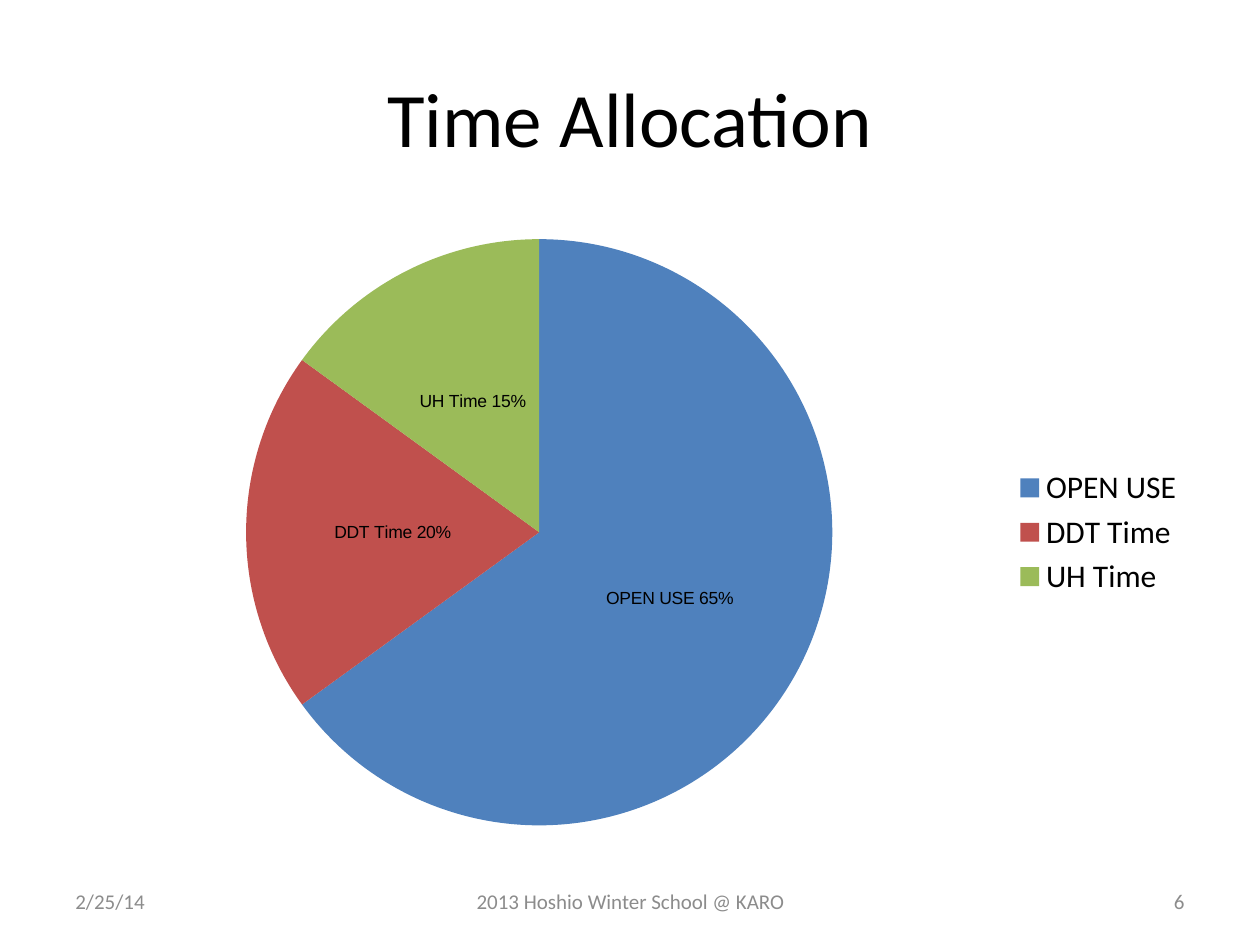
import pptx
import pptx.util
import pptx.chart.data
import pptx.dml.color
import pptx.enum.chart
import pptx.enum.text
import pptx.oxml
import pptx.oxml.ns

Inches, Pt = pptx.util.Inches, pptx.util.Pt
Align = pptx.enum.text.PP_ALIGN
Middle = pptx.enum.text.MSO_ANCHOR.MIDDLE

TITLE = "Time Allocation"
SHARES = [("OPEN USE", 65, "4F81BD"), ("DDT Time", 20, "C0504D"), ("UH Time", 15, "9BBB59")]
FOOTER = [  # text, left, width, alignment
    ("2/25/14", 0.5, 2.33, Align.LEFT),
    ("2013 Hoshio Winter School @ KARO", 3.42, 3.17, Align.CENTER),
    ("6", 7.17, 2.33, Align.RIGHT),
]
PLOT = {"x": 0.16, "y": 0.03, "w": 0.52, "h": 0.94}  # shares of the chart frame
THEME = {
    "font": "Calibri", "label_font": "Arial",
    "ink": "000000", "muted": "8C8C8C",
    "title": 44, "legend": 18, "label": 10, "footer": 12,
}


def color(code):
    return pptx.dml.color.RGBColor.from_string(code)


def style(font, size, ink="ink", face="font"):
    font.name, font.size = THEME[face], Pt(THEME[size])
    font.color.rgb = color(THEME[ink])


def place(shape, left, top, width, height):
    shape.left, shape.top = Inches(left), Inches(top)
    shape.width, shape.height = Inches(width), Inches(height)


def write(shape, text, align, size, ink="ink"):
    frame = shape.text_frame
    frame.text, frame.word_wrap = text, True
    frame.vertical_anchor = Middle
    line = frame.paragraphs[0]
    line.alignment = align
    style(line.runs[0].font, size, ink)


def fix_plot(chart):
    """Set the inner plot area by hand."""
    area = chart._chartSpace.chart.plotArea
    for old in area.findall(pptx.oxml.ns.qn("c:layout")):
        area.remove(old)
    modes = "".join(f'<c:{k}Mode val="edge"/>' for k in "xy")
    sizes = "".join(f'<c:{k} val="{v}"/>' for k, v in PLOT.items())
    area.insert(0, pptx.oxml.parse_xml(
        f'<c:layout {pptx.oxml.ns.nsdecls("c")}><c:manualLayout>'
        f'<c:layoutTarget val="inner"/>{modes}{sizes}</c:manualLayout></c:layout>'))


def add_pie(slide):
    data = pptx.chart.data.CategoryChartData()
    data.categories = [name for name, _, _ in SHARES]
    data.add_series("Series 1", [value for _, value, _ in SHARES])
    kinds = pptx.enum.chart
    chart = slide.shapes.add_chart(
        kinds.XL_CHART_TYPE.PIE, Inches(0.5), Inches(1.75), Inches(9), Inches(4.95), data).chart
    style(chart.font, "legend")
    chart.has_title = False
    chart.has_legend = True
    chart.legend.position = kinds.XL_LEGEND_POSITION.RIGHT
    chart.legend.include_in_layout = False
    style(chart.legend.font, "legend")

    plot = chart.plots[0]
    plot.vary_by_categories = True
    for i, (_, _, code) in enumerate(SHARES):
        fill = plot.series[0].points[i].format.fill
        fill.solid()
        fill.fore_color.rgb = color(code)

    plot.has_data_labels = True
    labels = plot.data_labels
    labels.show_category_name = labels.show_percentage = True
    labels.show_value = False
    labels.number_format, labels.number_format_is_linked = "0%", False
    labels.position = kinds.XL_LABEL_POSITION.CENTER
    style(labels.font, "label", face="label_font")
    gap = pptx.oxml.parse_xml(f'<c:separator {pptx.oxml.ns.nsdecls("c")}> </c:separator>')
    labels._element.find(pptx.oxml.ns.qn("c:showBubbleSize")).addnext(gap)
    fix_plot(chart)


def main():
    deck = pptx.Presentation()
    deck.slide_width, deck.slide_height = Inches(10), Inches(7.5)
    slide = deck.slides.add_slide(deck.slide_layouts[5])
    title = slide.shapes.title
    place(title, 0.5, 0.3, 9, 1.25)
    write(title, TITLE, Align.CENTER, "title")
    add_pie(slide)
    for text, left, width, align in FOOTER:
        box = slide.shapes.add_textbox(0, 0, 0, 0)
        place(box, left, 6.95, width, 0.4)
        write(box, text, align, "footer", "muted")
    deck.save("out.pptx")


if __name__ == "__main__":
    main()
